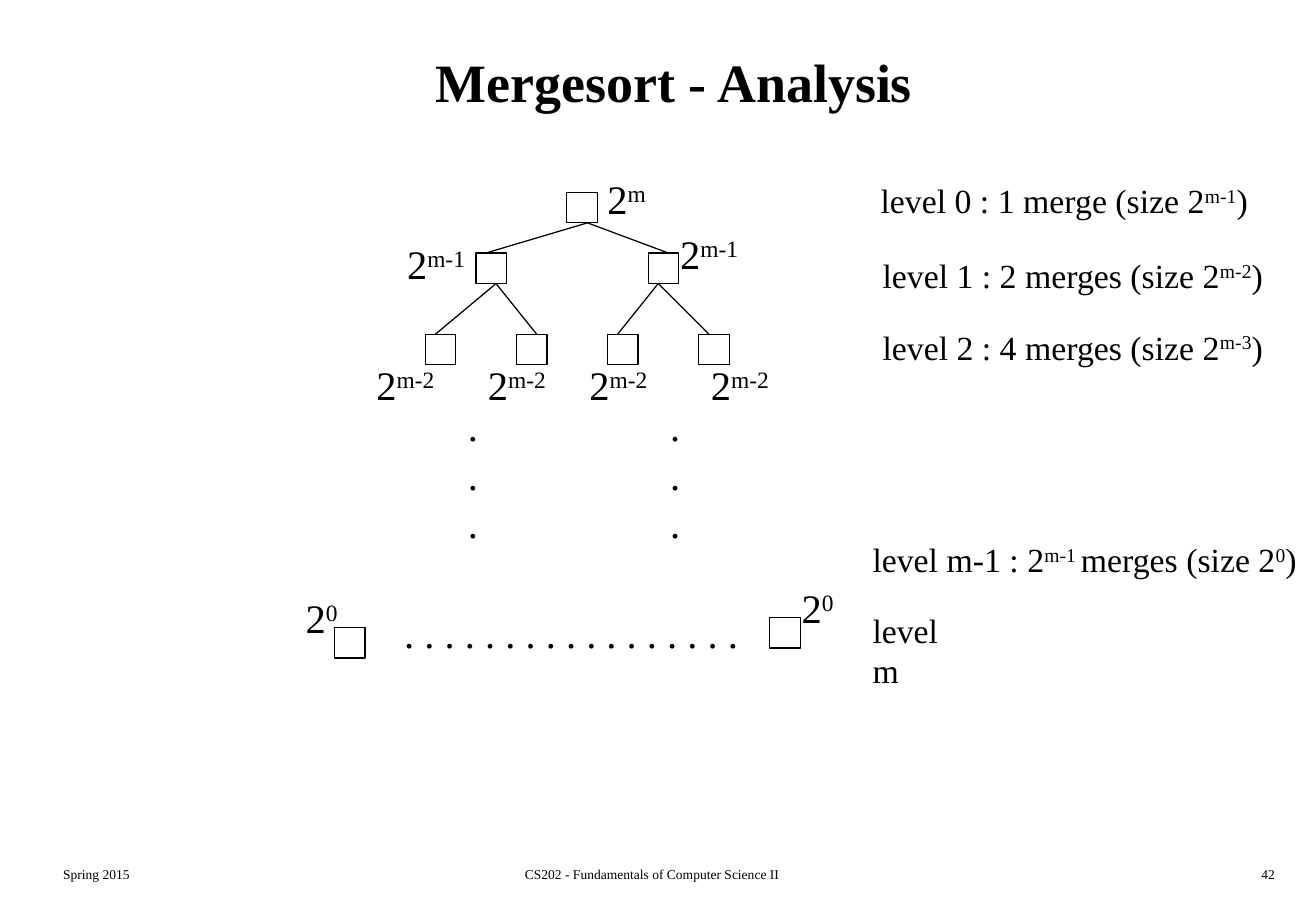
"""Build the slide on the merge tree and level counts of mergesort."""
from lxml.etree import SubElement
from pptx import Presentation
from pptx.dml.color import RGBColor
from pptx.enum.shapes import MSO_CONNECTOR, MSO_SHAPE
from pptx.enum.text import MSO_ANCHOR, PP_ALIGN
from pptx.oxml.ns import qn
from pptx.util import Cm, Pt

COLORS = {"ink": "000000", "paper": "FFFFFF"}
FONT = "Times New Roman"
NODE_SIZE, LINE_WIDTH = 0.64, 0.75

# Superscripts stand between carets; places are left, top, width, height in cm.
HEADING = ("Mergesort - Analysis", (1.07, 0.43, 26.04, 2.54))
FOOTERS = [
    ("Spring 2015", (1.07, 17.98, 5.74, 0.64), PP_ALIGN.LEFT),
    ("CS202 - Fundamentals of Computer Science II", (8.48, 17.98, 10.31, 0.64), PP_ALIGN.CENTER),
    ("42", (21.16, 17.98, 5.74, 0.64), PP_ALIGN.RIGHT),
]
TREE_ROWS = [
    (4.02, [11.85]),
    (5.29, [9.95, 13.55]),
    (6.99, [8.89 + 1.905 * leaf for leaf in range(4)]),
]
LAST_LEVEL = [(6.99, 13.12), (16.09, 12.91)]
BRANCHES = [
    ((12.28, 4.66), (10.16, 13.97), 5.29),
    ((10.37, 5.93), (9.1, 11.22), 6.99),
    ((13.76, 5.93), (12.91, 14.82), 6.99),
]
SIZE_LABELS = [
    ("2^m^", 1.37, [(12.45, 3.51)]),
    ("2^m-1^", 1.85, [(8.26, 4.87), (13.97, 4.66)]),
    ("2^m-2^", 1.85, [(left, 7.41) for left in (7.62, 9.95, 12.07, 14.61)]),
    ("2^0^", 1.22, [(6.14, 12.28), (16.51, 12.07)]),
]
ELLIPSES = [
    (".\n.\n.", (9.53, 8.26, 0.71, 3.3)),
    (".\n.\n.", (13.76, 8.26, 0.71, 3.3)),
    (" ".join("." * 17), (8.2, 12.6, 7.49, 1.27)),
]
LEVELS = [
    ("level 0 : 1 merge (size 2^m-1^)", (18.16, 3.63, 8.43, 1.09)),
    ("level 1 : 2 merges (size 2^m-2^)", (18.2, 5.21, 8.71, 1.09)),
    ("level 2 : 4 merges (size 2^m-3^)", (18.2, 6.7, 8.71, 1.09)),
    ("level m-1 : 2^m-1 ^merges (size 2^0^)", (17.99, 11.14, 9.65, 1.09)),
    ("level m", (17.99, 12.62, 2.59, 1.09)),
]


def color(name):
    """Return the named colour."""
    return RGBColor.from_string(COLORS[name])


def apply(target, formats):
    """Set every attribute in formats on the target."""
    for name, value in formats.items():
        setattr(target, name, value)


def write(slide, wording, place, size, bold=False, align=PP_ALIGN.LEFT, wrap=False,
          anchor=MSO_ANCHOR.TOP):
    """Add a text box, raising the parts between carets."""
    frame = slide.shapes.add_textbox(*map(Cm, place)).text_frame
    apply(frame, {"word_wrap": wrap, "vertical_anchor": anchor})
    for index, line in enumerate(wording.split("\n")):
        paragraph = frame.add_paragraph() if index else frame.paragraphs[0]
        paragraph.alignment = align
        for position, part in enumerate(line.split("^")):
            if not part:
                continue
            run = paragraph.add_run()
            run.text = part
            apply(run.font, {"name": FONT, "size": Pt(size), "bold": bold})
            run.font.color.rgb = color("ink")
            if position % 2:
                run.font._element.set("baseline", "30000")


def draw_node(slide, left, top):
    """Add one square of the tree."""
    node = slide.shapes.add_shape(MSO_SHAPE.RECTANGLE, *map(Cm, (left, top, NODE_SIZE, NODE_SIZE)))
    node.shadow.inherit = False
    node.fill.solid()
    node.fill.fore_color.rgb = color("paper")
    node.line.color.rgb = color("ink")
    node.line.width = Pt(LINE_WIDTH)


def draw_branch(slide, start, end):
    """Add one line from a parent to a child."""
    branch = slide.shapes.add_connector(MSO_CONNECTOR.STRAIGHT, *map(Cm, start + end))
    branch.line.color.rgb = color("ink")
    branch.line.width = Pt(LINE_WIDTH)
    SubElement(branch._element.spPr, qn("a:effectLst"))


def main():
    """Place the content on one slide and save it."""
    deck = Presentation()
    apply(deck, {"slide_width": Cm(27.51), "slide_height": Cm(19.05)})
    slide = deck.slides.add_slide(deck.slide_layouts[6])
    for wording, place, align in FOOTERS:
        write(slide, wording, place, 8, align=align, wrap=True)
    write(slide, *HEADING, 32, bold=True, align=PP_ALIGN.CENTER, wrap=True,
          anchor=MSO_ANCHOR.MIDDLE)
    tree = [(left, top) for top, lefts in TREE_ROWS for left in lefts]
    for left, top in tree + LAST_LEVEL:
        draw_node(slide, left, top)
    for parent, children, top in BRANCHES:
        for child in children:
            draw_branch(slide, parent, (child, top))
    for wording, place in ELLIPSES:
        write(slide, wording, place, 24)
    for wording, width, corners in SIZE_LABELS:
        for corner in corners:
            write(slide, wording, (*corner, width, 1.27), 24)
    for wording, place in LEVELS:
        write(slide, wording, place, 20)


    deck.save("out.pptx")


if __name__ == "__main__":
    main()
